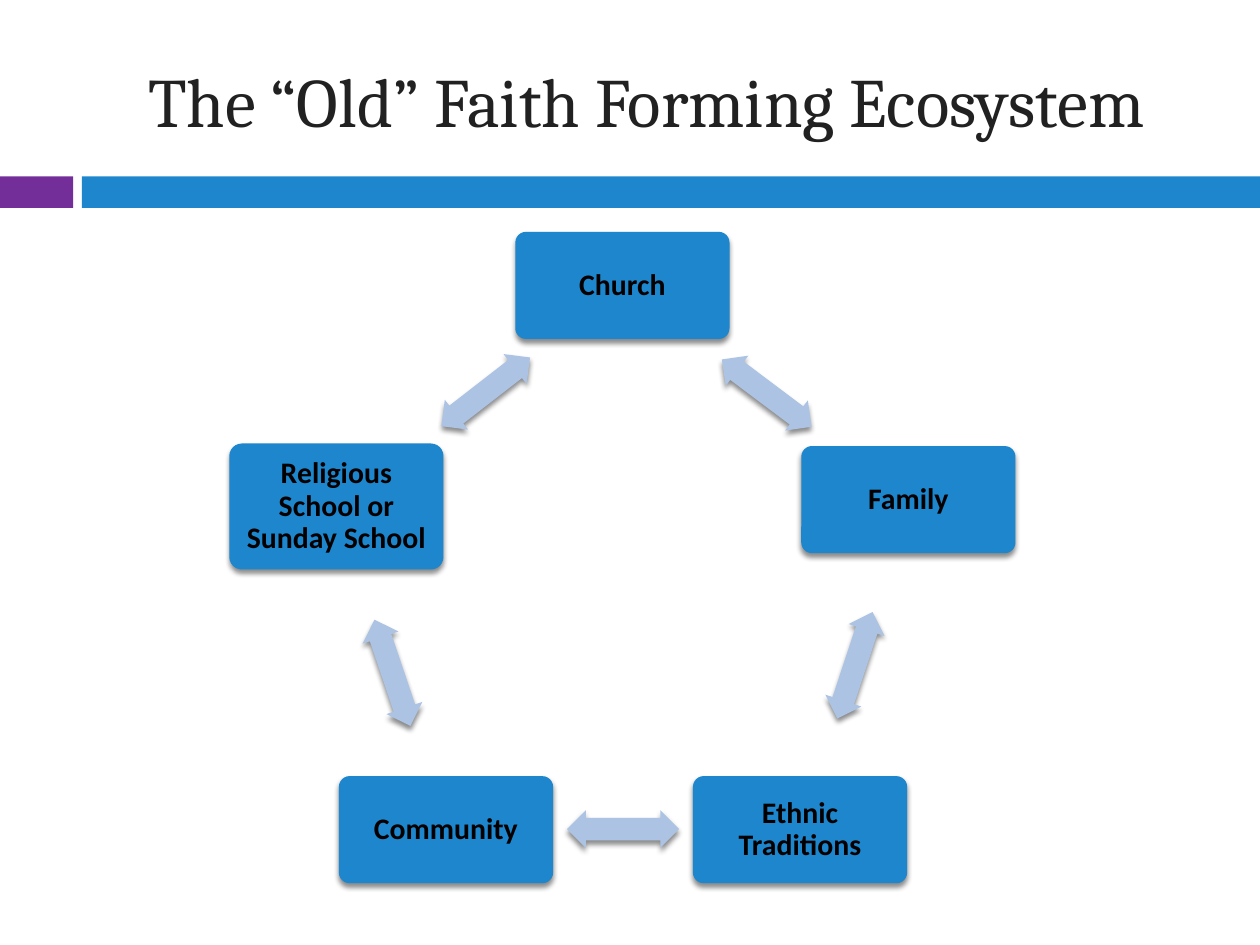
from lxml.etree import SubElement
from pptx import Presentation
from pptx.dml.color import RGBColor
from pptx.enum.shapes import MSO_SHAPE
from pptx.enum.text import MSO_ANCHOR, PP_ALIGN
from pptx.oxml.ns import qn
from pptx.util import Pt

PX = 9144  # 100 px to the inch
BLUE = RGBColor(0x1D, 0x86, 0xCD)
PURPLE = RGBColor(0x73, 0x2E, 0x9A)
PALE = RGBColor(0xAC, 0xC3, 0xE3)
INK = RGBColor(0x21, 0x21, 0x21)
BLACK = RGBColor(0, 0, 0)


def add_shape(kind, left, top, width, height, fill, shade=True):
    """Add a filled shape without outline, with a soft shadow below if shade."""
    shape = slide.shapes.add_shape(kind, left * PX, top * PX, width * PX, height * PX)
    shape.fill.solid()
    shape.fill.fore_color.rgb = fill
    shape.line.fill.background()
    shape.shadow.inherit = False
    if shade:
        effects = shape._element.spPr.find(qn("a:effectLst"))
        outer = SubElement(effects, qn("a:outerShdw"), blurRad="38100",
                           dist="30000", dir="5400000", rotWithShape="0")
        color = SubElement(outer, qn("a:srgbClr"), val="000000")
        SubElement(color, qn("a:alpha"), val="45000")
    return shape


def set_text(shape, text, size, face, color, bold=False):
    frame = shape.text_frame
    frame.word_wrap = True
    frame.vertical_anchor = MSO_ANCHOR.MIDDLE
    frame.text = text
    para = frame.paragraphs[0]
    para.alignment = PP_ALIGN.CENTER
    font = para.runs[0].font
    font.size, font.name, font.bold = Pt(size), face, bold
    font.color.rgb = color


prs = Presentation()
prs.slide_width, prs.slide_height = 1000 * PX, 750 * PX
slide = prs.slides.add_slide(prs.slide_layouts[6])

# Title and the band below it
add_shape(MSO_SHAPE.RECTANGLE, 0, 140, 58, 25, PURPLE, shade=False)
add_shape(MSO_SHAPE.RECTANGLE, 65, 140, 935, 25, BLUE, shade=False)
title = slide.shapes.add_textbox(67 * PX, 25 * PX, 892 * PX, 108 * PX)
set_text(title, "The “Old” Faith Forming Ecosystem", 39.6, "Cambria", INK)

# Ring of boxes: text, left, top, height
boxes = [
    ("Church", 409, 184, 85),
    ("Family", 636, 354, 85),
    ("Ethnic Traditions", 550, 616, 85),
    ("Community", 269, 616, 85),
    ("Religious School or Sunday School", 182, 352, 100),
]
for text, left, top, height in boxes:
    box = add_shape(MSO_SHAPE.ROUNDED_RECTANGLE, left, top, 170, height, BLUE)
    box.adjustments[0] = 0.1
    set_text(box, text, 17, "Calibri", BLACK, bold=True)
    frame = box.text_frame
    frame.margin_left = frame.margin_right = 10 * PX
    frame.margin_top = frame.margin_bottom = 10 * PX
    frame.paragraphs[0].line_spacing = 0.9

# Arrows between neighbours: left, top, turn
arrows = [
    (564, 297, 36.9),
    (634, 513, 108.3),
    (450, 643, 180),
    (267, 519, 251.3),
    (341, 296, 322.2),
]
for left, top, turn in arrows:
    arrow = add_shape(MSO_SHAPE.LEFT_RIGHT_ARROW, left, top, 89, 30, PALE)
    arrow.adjustments[0] = 0.6
    arrow.adjustments[1] = 0.5
    arrow.rotation = turn

prs.save("out.pptx")
